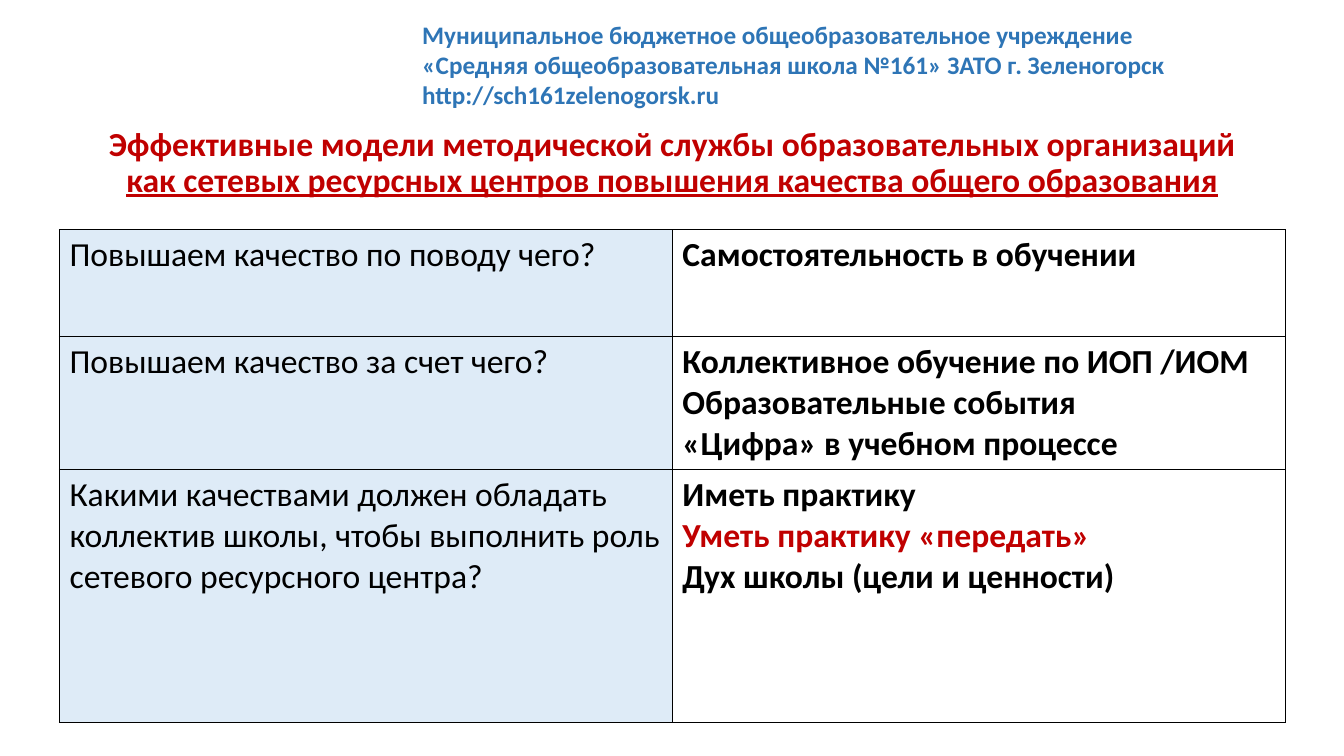
from lxml import etree
from pptx import Presentation
from pptx.dml.color import RGBColor
from pptx.enum import text
from pptx.oxml import ns
from pptx.util import Pt

FONT = "Calibri"
BLACK, RED, BLUE, PALE_BLUE = "000000", "C00000", "2E75B6", "DEEBF7"

SCHOOL = [
    "Муниципальное бюджетное общеобразовательное учреждение\v"
    "«Средняя общеобразовательная школа №161» ЗАТО г. Зеленогорск",
    "http://sch161zelenogorsk.ru",
]
TITLE = [
    ("Эффективные модели методической службы образовательных организаций ", False),
    ("как сетевых ресурсных центров повышения качества общего образования", True),
]
ROWS = [
    (76.3, "Повышаем качество по поводу чего?",
     ["Самостоятельность в обучении"]),
    (95, "Повышаем качество за счет чего?",
     ["Коллективное обучение по ИОП /ИОМ",
      "Образовательные события",
      "«Цифра» в учебном процессе"]),
    (180.7, "Какими качествами должен обладать коллектив школы, "
     "чтобы выполнить роль сетевого ресурсного центра?",
     ["Иметь практику",
      "Уметь практику «передать»",
      "Дух школы (цели и ценности)"]),
]
HIGHLIGHT = "Уметь практику «передать»"
COLUMN_WIDTH = 437.8


def color(value):
    return RGBColor.from_string(value)


def set_font(font, size, value, bold):
    font.name, font.size, font.bold = FONT, Pt(size), bold
    font.color.rgb = color(value)


def write_lines(frame, lines, size, value, bold):
    frame.text = "\n".join(lines)
    for paragraph in frame.paragraphs:
        shade = RED if paragraph.text == HIGHLIGHT else value
        set_font(paragraph.font, size, shade, bold)


def add_borders(cell):
    properties = cell._tc.get_or_add_tcPr()
    for index, side in enumerate(("lnL", "lnR", "lnT", "lnB")):
        line = etree.Element(ns.qn(f"a:{side}"), w=str(Pt(1)))
        fill = etree.SubElement(line, ns.qn("a:solidFill"))
        etree.SubElement(fill, ns.qn("a:srgbClr"), val=BLACK)
        properties.insert(index, line)


def add_title(slide):
    title = slide.shapes.title
    title.left, title.top, title.width, title.height = map(Pt, (66.2, 87.1, 828, 115.2))
    frame = title.text_frame
    frame.word_wrap = True
    frame.auto_size = text.MSO_AUTO_SIZE.NONE
    frame.vertical_anchor = text.MSO_ANCHOR.TOP
    paragraph = frame.paragraphs[0]
    paragraph.alignment = text.PP_ALIGN.CENTER
    paragraph.line_spacing = 0.9
    set_font(paragraph.font, 24, RED, True)
    for words, underlined in TITLE:
        run = paragraph.add_run()
        run.text = words
        run.font.underline = underlined


def add_school(slide):
    frame = slide.shapes.add_textbox(*map(Pt, (294.5, 10.1, 598.3, 72.7))).text_frame
    frame.word_wrap = True
    write_lines(frame, SCHOOL, 18, BLUE, True)


def add_questions(slide):
    height = sum(row[0] for row in ROWS)
    table = slide.shapes.add_table(
        len(ROWS), 2, Pt(42.5), Pt(164.2), Pt(2 * COLUMN_WIDTH), Pt(height)).table
    table.first_row = table.horz_banding = False
    for column in table.columns:
        column.width = Pt(COLUMN_WIDTH)
    for index, (row_height, question, answers) in enumerate(ROWS):
        table.rows[index].height = Pt(row_height)
        question_cell, answer_cell = table.rows[index].cells
        write_lines(question_cell.text_frame, [question], 24, BLACK, False)
        question_cell.fill.solid()
        question_cell.fill.fore_color.rgb = color(PALE_BLUE)
        write_lines(answer_cell.text_frame, answers, 24, BLACK, True)
        answer_cell.fill.background()
        add_borders(question_cell)
        add_borders(answer_cell)


def main():
    presentation = Presentation()
    presentation.slide_width, presentation.slide_height = Pt(960), Pt(540)
    slide = presentation.slides.add_slide(presentation.slide_layouts[5])
    add_title(slide)
    add_school(slide)
    add_questions(slide)
    presentation.save("out.pptx")


if __name__ == "__main__":
    main()
